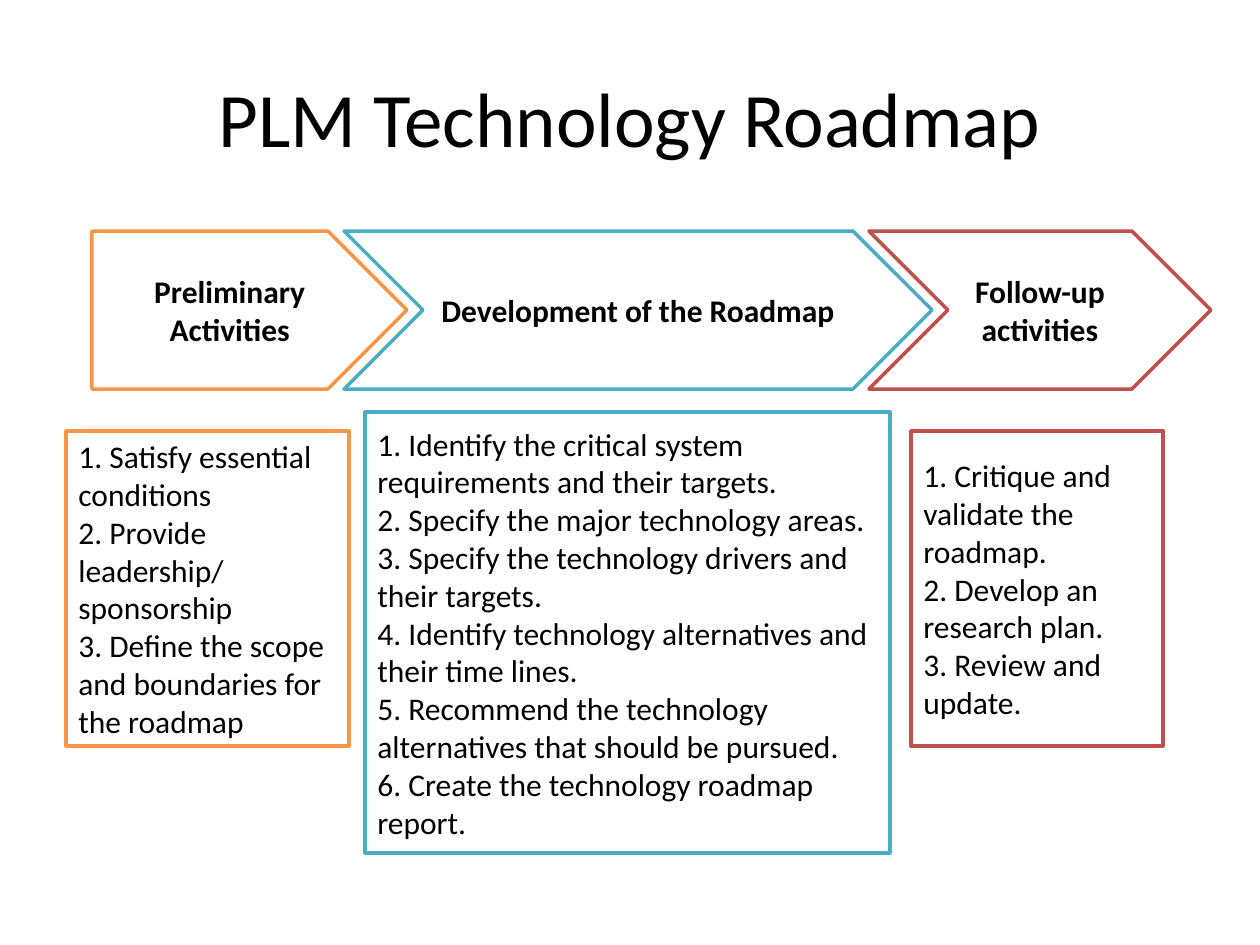
from dataclasses import dataclass

import pptx
import pptx.dml.color
import pptx.enum.shapes
import pptx.enum.text
import pptx.util

PX_PER_INCH = 126
FONT = "Calibri"
COLORS = {
    "paper": "FFFFFF",
    "ink": "000000",
    "preliminary": "F79646",
    "development": "4BACC6",
    "follow_up": "C0504D",
}
Shapes = pptx.enum.shapes.MSO_SHAPE
Align = pptx.enum.text.PP_ALIGN


@dataclass
class Area:
    left: int
    top: int
    width: int
    height: int

    def emu(self) -> list[int]:
        return [px(n) for n in (self.left, self.top, self.width, self.height)]


@dataclass
class Phase:
    color: str
    arrow_kind: int
    arrow: Area
    heading: str
    box: Area
    steps: list[str]


def px(length: int) -> int:
    return round(length * pptx.util.Inches(1) / PX_PER_INCH)


def rgb(name: str) -> pptx.dml.color.RGBColor:
    return pptx.dml.color.RGBColor.from_string(COLORS[name])


def write(frame, lines: list[str], *, size: int = 18, bold: bool = False,
          align=Align.LEFT) -> None:
    frame.word_wrap = True
    frame.auto_size = pptx.enum.text.MSO_AUTO_SIZE.NONE
    frame.vertical_anchor = pptx.enum.text.MSO_ANCHOR.MIDDLE
    frame.text = "\n".join(lines)
    for paragraph in frame.paragraphs:
        paragraph.alignment = align
        paragraph.font.name = FONT
        paragraph.font.size = pptx.util.Pt(size)
        paragraph.font.bold = bold
        paragraph.font.color.rgb = rgb("ink")


def draw_outline(slide, kind: int, area: Area, color: str):
    outline = slide.shapes.add_shape(kind, *area.emu())
    outline.shadow.inherit = False
    outline.fill.solid()
    outline.fill.fore_color.rgb = rgb("paper")
    outline.line.color.rgb = rgb(color)
    outline.line.width = pptx.util.Pt(2)
    return outline


def draw_arrow(slide, phase: Phase) -> None:
    arrow = draw_outline(slide, phase.arrow_kind, phase.arrow, phase.color)
    write(arrow.text_frame, [phase.heading], bold=True, align=Align.CENTER)


def draw_steps(slide, phase: Phase) -> None:
    box = draw_outline(slide, Shapes.RECTANGLE, phase.box, phase.color)
    numbered = [f"{n}. {step}" for n, step in enumerate(phase.steps, 1)]
    write(box.text_frame, numbered)


PHASES = [
    Phase("preliminary", Shapes.PENTAGON, Area(92, 231, 315, 158),
          "Preliminary Activities", Area(66, 431, 283, 315), [
              "Satisfy essential conditions",
              "Provide leadership/ sponsorship",
              "Define the scope and boundaries for the roadmap",
          ]),
    Phase("development", Shapes.CHEVRON, Area(344, 231, 588, 158),
          "Development of the Roadmap", Area(365, 412, 525, 441), [
              "Identify the critical system requirements and their targets.",
              "Specify the major technology areas.",
              "Specify the technology drivers and their targets.",
              "Identify technology alternatives and their time lines.",
              "Recommend the technology alternatives that should be pursued.",
              "Create the technology roadmap report.",
          ]),
    Phase("follow_up", Shapes.CHEVRON, Area(869, 231, 342, 158),
          "Follow-up activities", Area(911, 431, 252, 315), [
              "Critique and validate the roadmap.",
              "Develop an research plan.",
              "Review and update.",
          ]),
]


def main() -> None:
    deck = pptx.Presentation()
    deck.slide_width, deck.slide_height = px(1260), px(945)
    slide = deck.slides.add_slide(deck.slide_layouts[5])

    # Title
    title = slide.shapes.title
    title.left, title.top, title.width, title.height = Area(63, 38, 1134, 158).emu()
    write(title.text_frame, ["PLM Technology Roadmap"], size=44, align=Align.CENTER)

    # Row of phases, then the steps of each
    for phase in PHASES:
        draw_arrow(slide, phase)
    for phase in PHASES:
        draw_steps(slide, phase)

    deck.save("out.pptx")


if __name__ == "__main__":
    main()
